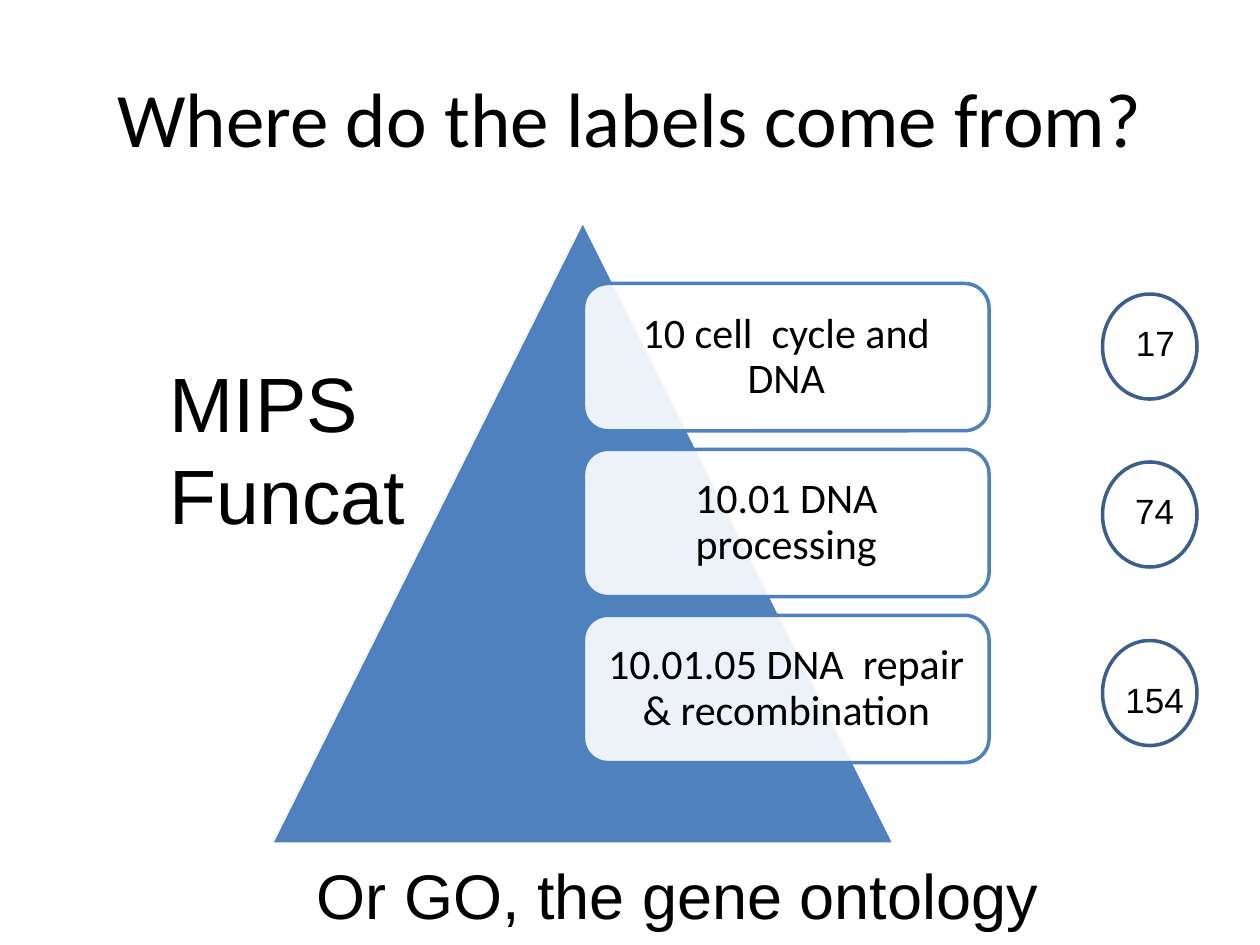
from lxml import etree
from pptx import Presentation
from pptx.dml.color import RGBColor
from pptx.enum import shapes, text
from pptx.oxml.ns import qn
from pptx.util import Pt

BLACK = RGBColor(0x00, 0x00, 0x00)
WHITE = RGBColor(0xFF, 0xFF, 0xFF)
BLUE = RGBColor(0x4F, 0x81, 0xBD)
DARK_BLUE = RGBColor(0x3A, 0x5F, 0x8C)


def write(frame, words, size, font="Arial", align=text.PP_ALIGN.LEFT,
          anchor=text.MSO_ANCHOR.TOP, spacing=None, wrap=True):
    frame.word_wrap = wrap
    frame.vertical_anchor = anchor
    frame.text = words
    for paragraph in frame.paragraphs:
        paragraph.alignment = align
        paragraph.line_spacing = spacing
        paragraph.font.size = Pt(size)
        paragraph.font.name = font
        paragraph.font.color.rgb = BLACK


def add_outlined(kind, left, top, width, height, fill, line):
    shape = slide.shapes.add_shape(kind, Pt(left), Pt(top), Pt(width), Pt(height))
    shape.shadow.inherit = False
    if fill is None:
        shape.fill.background()
    else:
        shape.fill.solid()
        shape.fill.fore_color.rgb = fill
    shape.line.color.rgb = line
    shape.line.width = Pt(2)
    return shape


deck = Presentation()
deck.slide_width, deck.slide_height = Pt(720), Pt(540)
slide = deck.slides.add_slide(deck.slide_layouts[5])

# Title
title = slide.shapes.title
title.left, title.top, title.width, title.height = Pt(36), Pt(21.6), Pt(648), Pt(90)
write(title.text_frame, "Where do the labels come from?", 44, font="Calibri",
      align=text.PP_ALIGN.CENTER, anchor=text.MSO_ANCHOR.MIDDLE)

# Pyramid behind the levels
add_outlined(shapes.MSO_SHAPE.ISOSCELES_TRIANGLE, 154.8, 126, 356.4, 356.4, BLUE, WHITE)

# Category levels, evenly spaced, slightly see-through
levels = ["10 cell  cycle and DNA", "10.01 DNA processing",
          "10.01.05 DNA  repair & recombination"]
for row, category in enumerate(levels):
    level = add_outlined(shapes.MSO_SHAPE.ROUNDED_RECTANGLE,
                         333.4, 162 + 94.8 * row, 231.8, 84.2, WHITE, BLUE)
    tint = level.fill._xPr.find(qn("a:solidFill"))[0]
    etree.SubElement(tint, qn("a:alpha"), val="90000")
    frame = level.text_frame
    frame.margin_left = frame.margin_right = Pt(7.2)
    frame.margin_top = frame.margin_bottom = Pt(7.2)
    write(frame, category, 24, font="Calibri", align=text.PP_ALIGN.CENTER,
          anchor=text.MSO_ANCHOR.MIDDLE, spacing=0.9)

# Rings around the label counts
for ring_top in (168, 264, 366):
    add_outlined(shapes.MSO_SHAPE.OVAL, 630, ring_top, 54, 60, None, DARK_BLUE)

# Label counts, scheme name and closing remark
captions = [
    ("MIPS\nFuncat", 44, 90, 199.4, 210, 113.8, True),
    ("17", 20, 642, 180, 36.7, 31.5, True),
    (" 74", 20, 636, 276, 49, 31.5, True),
    ("154", 20, 636, 384, 48.2, 31.5, False),
    ("Or GO, the gene ontology", 36, 174, 486, 430.6, 51, True),
]
for words, size, left, top, width, height, wrap in captions:
    caption = slide.shapes.add_textbox(Pt(left), Pt(top), Pt(width), Pt(height))
    write(caption.text_frame, words, size, wrap=wrap)

deck.save("out.pptx")
